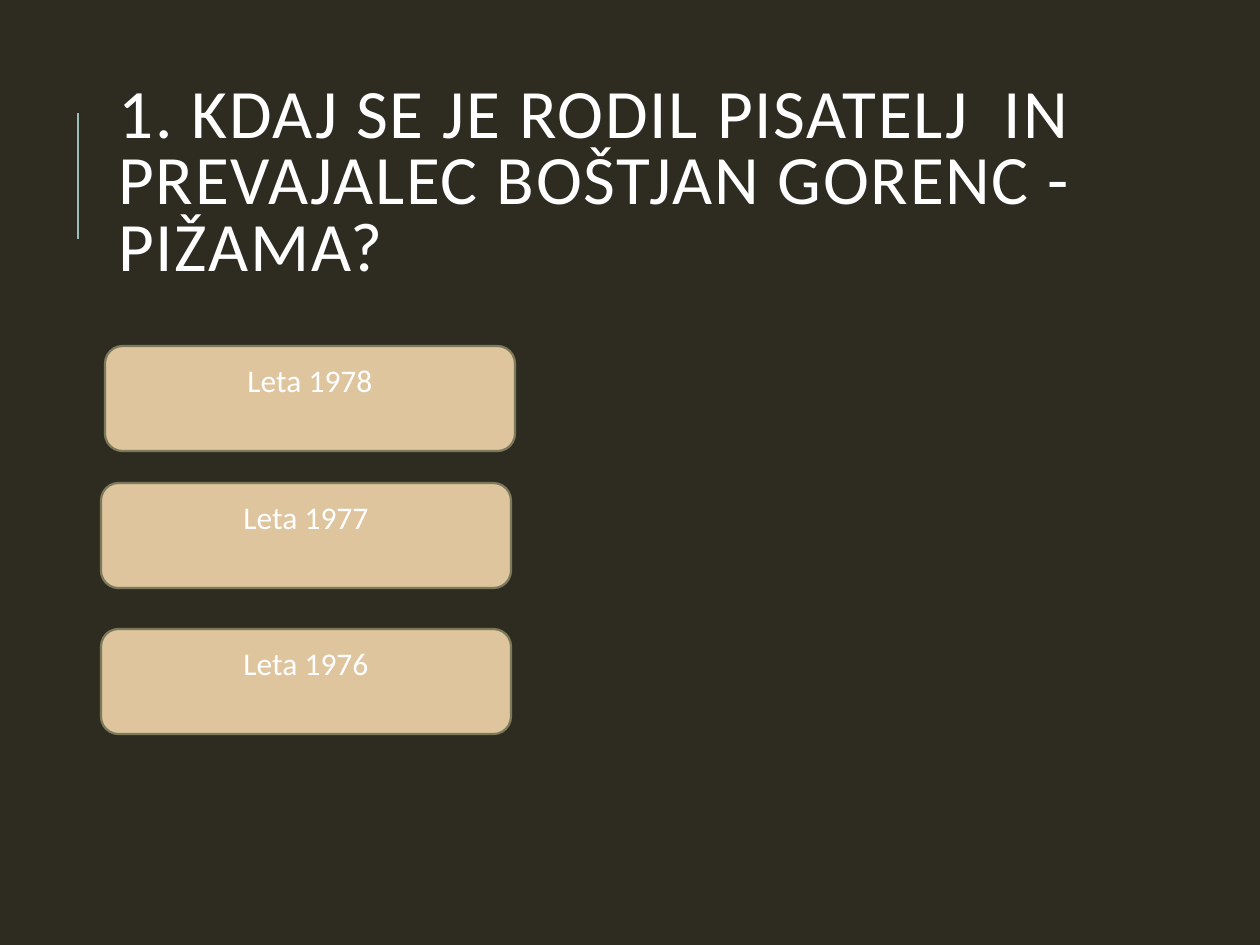
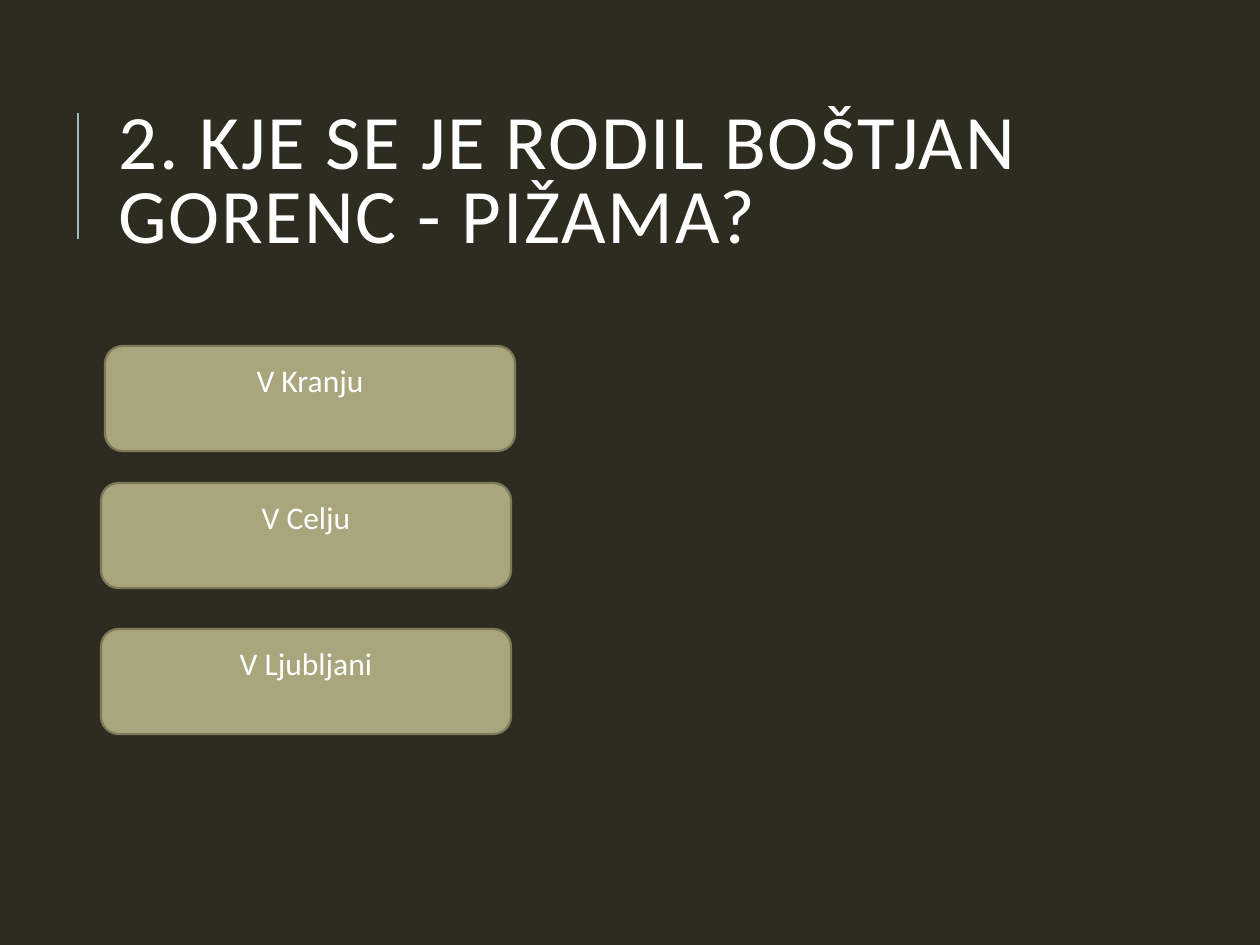
from lxml.etree import SubElement
from pptx import Presentation
from pptx.dml.color import RGBColor
from pptx.enum.shapes import MSO_CONNECTOR, MSO_SHAPE
from pptx.enum.text import MSO_ANCHOR, PP_ALIGN
from pptx.oxml.ns import qn
from pptx.util import Pt

PX_PER_INCH = 126
SLIDE_W, SLIDE_H = 1260, 945
FONT = "Calibri"
COLORS = {
    "background": "2E2B21",
    "rule": "9CBEBD",
    "text": "FFFFFF",
    "sand": "DEC59E",
    "olive": "A9A57C",
    "outline": "7D7A5C",
}
TITLE_BOX = (106, 81, 1004, 207)
ANSWERS_BOX = (101, 346, 410, 388)
ANSWER_H = 105
# Offset of each answer from the corner of the answers box
ANSWER_OFFSETS = [(4, 0), (0, 137), (0, 283)]

QUESTIONS = [
    {
        "title": "1. KDAJ SE JE RODIL PISATELJ  IN PREVAJALEC BOŠTJAN GORENC - PIŽAMA?",
        "title_size": 39.6,
        "answers": ["Leta 1978", "Leta 1977", "Leta 1976"],
        "fill": "sand",
    },
    {
        "title": "2. KJE SE JE RODIL BOŠTJAN GORENC - PIŽAMA?",
        "title_size": 44,
        "answers": ["V Kranju", "V Celju", "V Ljubljani"],
        "fill": "olive",
    },
]


def px(*lengths):
    return [round(n * 914400 / PX_PER_INCH) for n in lengths]


def rgb(name):
    return RGBColor.from_string(COLORS[name])


def write(sp, text, size, align=PP_ALIGN.LEFT, line_spacing=None, tracking=0, bottom=6):
    tf = sp.text_frame
    tf.word_wrap = True
    tf.vertical_anchor = MSO_ANCHOR.MIDDLE
    tf.margin_bottom = px(bottom)[0]
    p = tf.paragraphs[0]
    p.alignment = align
    p.line_spacing = line_spacing
    r = p.add_run()
    r.text = text
    r.font.name = FONT
    r.font.size = Pt(size)
    r.font.color.rgb = rgb("text")
    if tracking:
        r.font._element.set("spc", str(tracking * 100))


def add_title(s, box, text, size):
    x, y, w, h = box
    # Vertical rule left of the title
    rule_x, rule_y, rule_h = x - 28, y + 32, 126
    rule = s.shapes.add_connector(
        MSO_CONNECTOR.STRAIGHT, *px(rule_x, rule_y + rule_h, rule_x, rule_y))
    rule.line.color.rgb = rgb("rule")
    rule.line.width = Pt(1.5)
    SubElement(rule._element.spPr, qn("a:effectLst"))

    sp = s.shapes.add_textbox(*px(x, y, w, h))
    write(sp, text, size, line_spacing=0.8, tracking=1)


def add_answers(s, box, answers, fill):
    x, y, w, _ = box
    for text, (dx, dy) in zip(answers, ANSWER_OFFSETS):
        sp = s.shapes.add_shape(
            MSO_SHAPE.ROUNDED_RECTANGLE, *px(x + dx, y + dy, w, ANSWER_H))
        sp.shadow.inherit = False
        sp.fill.solid()
        sp.fill.fore_color.rgb = rgb(fill)
        sp.line.color.rgb = rgb("outline")
        sp.line.width = Pt(1.25)
        # The deep bottom margin lifts the text by half a line
        write(sp, text, 18, align=PP_ALIGN.CENTER, bottom=44)


def add_question(prs, question):
    s = prs.slides.add_slide(prs.slide_layouts[6])
    s.background.fill.solid()
    s.background.fill.fore_color.rgb = rgb("background")
    add_title(s, TITLE_BOX, question["title"], question["title_size"])
    add_answers(s, ANSWERS_BOX, question["answers"], question["fill"])


def main():
    prs = Presentation()
    prs.slide_width, prs.slide_height = px(SLIDE_W, SLIDE_H)
    for question in QUESTIONS:
        add_question(prs, question)
    prs.save("out.pptx")


if __name__ == "__main__":
    main()
